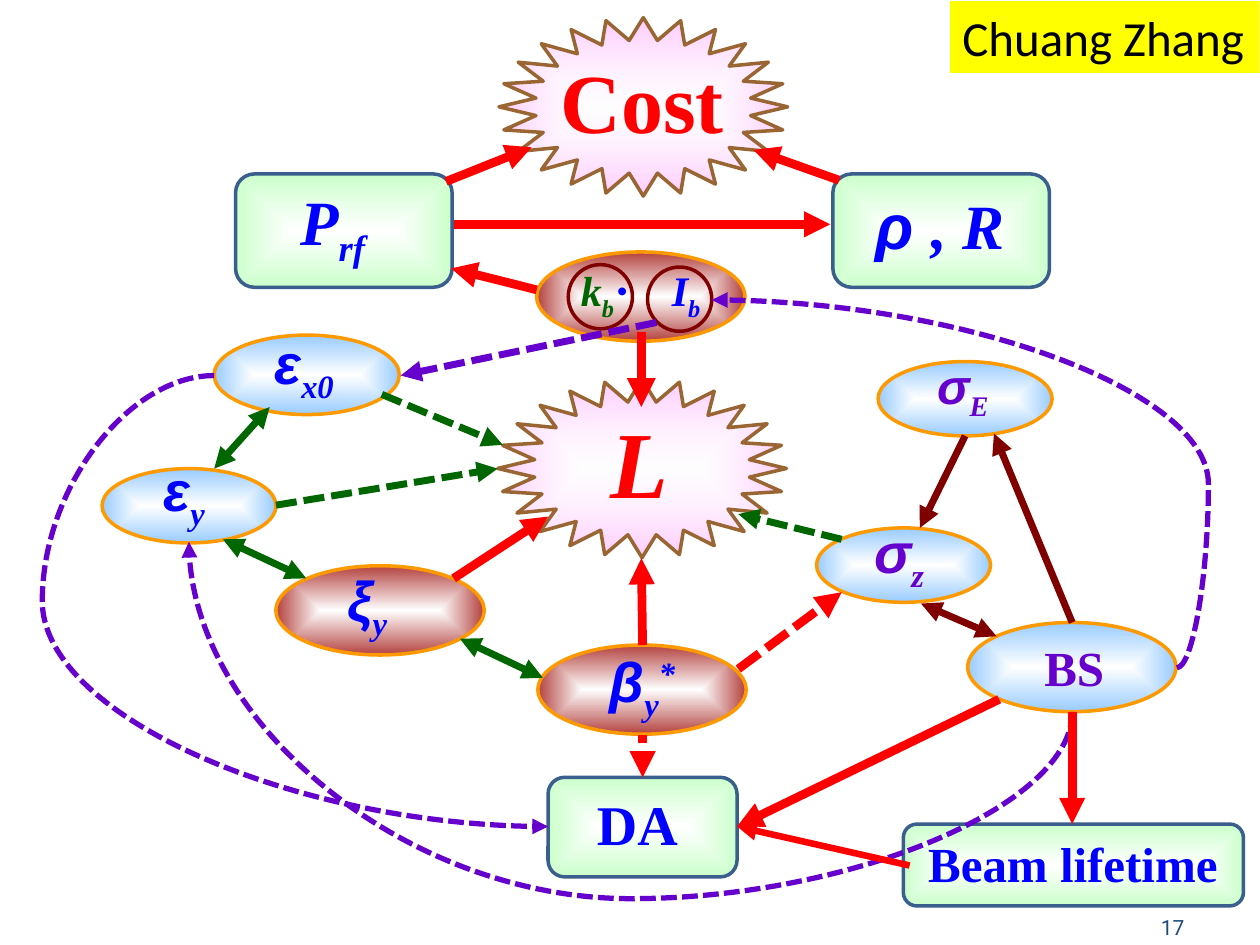
from typing import NamedTuple, Optional

from lxml.etree import SubElement
from pptx import Presentation
from pptx.dml.color import RGBColor
from pptx.enum.dml import MSO_LINE
from pptx.enum.shapes import MSO_CONNECTOR, MSO_SHAPE
from pptx.enum.text import MSO_ANCHOR, MSO_AUTO_SIZE, PP_ALIGN
from pptx.oxml.ns import qn
from pptx.util import Pt

WHITE = RGBColor(0xFF, 0xFF, 0xFF)
BLACK = RGBColor(0x00, 0x00, 0x00)
YELLOW = RGBColor(0xFF, 0xFF, 0x00)
RED = RGBColor(0xFF, 0x00, 0x00)
BLUE = RGBColor(0x00, 0x00, 0xFF)
PURPLE = RGBColor(0x66, 0x00, 0xCC)
GREEN = RGBColor(0x00, 0x66, 0x00)
MAROON = RGBColor(0x80, 0x00, 0x00)
ORANGE = RGBColor(0xFF, 0x99, 0x00)
BROWN = RGBColor(0x99, 0x66, 0x33)
STEEL = RGBColor(0x3A, 0x5F, 0x8C)
NAVY = RGBColor(0x1F, 0x49, 0x7D)
BRICK = RGBColor(0xB3, 0x42, 0x3F)
SKY = RGBColor(0x99, 0xCC, 0xFF)
PINK = RGBColor(0xFF, 0xCC, 0xFF)
MINT = RGBColor(0xCC, 0xFF, 0xCC)

SERIF, SANS = "Times New Roman", "Arial"
BIG, SMALL = (119, 51), (99.4, 42.5)
BOX, STAR = (123.8, 64.8), (165, 102)
CIRCLE = (36.7, 36.7)
DASH, DOT = MSO_LINE.SQUARE_DOT, MSO_LINE.ROUND_DOT


class Run(NamedTuple):
    text: str
    baseline: int = 0
    face: Optional[str] = None
    color: Optional[RGBColor] = None


class Diagram:
    def __init__(self, slide):
        self.shapes = slide.shapes

    def node(self, kind, at, size, edge, tint=None, clear_center=False):
        shape = self.shapes.add_shape(kind, *map(Pt, at + size))
        shape.shadow.inherit = False
        shape.line.color.rgb = edge
        shape.line.width = Pt(2)
        if tint is None:
            shape.fill.background()
            return
        shape.fill.gradient()
        center, rim = shape.fill.gradient_stops
        center.color.rgb, center.position = WHITE, 0
        rim.color.rgb, rim.position = tint, 1
        gradient = shape._element.spPr.find(qn("a:gradFill"))
        gradient.remove(gradient.find(qn("a:lin")))
        focus = SubElement(gradient, qn("a:path"), path="shape")
        SubElement(focus, qn("a:fillToRect"), l="50000", t="50000", r="50000", b="50000")
        if clear_center:
            SubElement(next(gradient.iter(qn("a:srgbClr"))), qn("a:alpha"), val="50000")

    def oval(self, at, size, tint):
        self.node(MSO_SHAPE.OVAL, at, size, ORANGE, tint)

    def ring(self, at):
        self.node(MSO_SHAPE.OVAL, at, CIRCLE, MAROON)

    def box(self, at, size=BOX):
        self.node(MSO_SHAPE.ROUNDED_RECTANGLE, at, size, STEEL, MINT)

    def star(self, at):
        self.node(MSO_SHAPE.STAR_24_POINT, at, STAR, BROWN, PINK, True)

    def label(self, runs, at, size, points, color, bold=True, italic=False,
              face=SERIF, align=PP_ALIGN.LEFT):
        box = self.shapes.add_textbox(*map(Pt, at + size))
        frame = box.text_frame
        frame.word_wrap = True
        frame.auto_size = MSO_AUTO_SIZE.SHAPE_TO_FIT_TEXT
        paragraph = frame.paragraphs[0]
        paragraph.alignment = align
        font = paragraph.font
        font.name, font.size, font.bold, font.italic = face, Pt(points), bold, italic
        font.color.rgb = color
        for part in runs:
            run = paragraph.add_run()
            run.text = part.text
            if part.face:
                run.font.name = part.face
            if part.color:
                run.font.color.rgb = part.color
            if part.baseline:
                run._r.get_or_add_rPr().set("baseline", str(part.baseline * 1000))
        return box

    def symbol(self, greek, subscript, at, size, color=BLUE, points=32, superscript=""):
        runs = [Run(greek, face=SANS), Run(subscript, -25)]
        if superscript:
            runs.append(Run(superscript, 30))
        self.label(runs, at, size, points, color, italic=True)

    def arrow(self, start, end, color, width=5, dash=None, both=False,
              kind=MSO_CONNECTOR.STRAIGHT):
        link = self.shapes.add_connector(kind, *map(Pt, start + end))
        link.line.color.rgb = color
        link.line.width = Pt(width)
        if dash:
            link.line.dash_style = dash
        outline = link.line._get_or_add_ln()
        if both:
            SubElement(outline, qn("a:headEnd"), type="triangle")
        SubElement(outline, qn("a:tailEnd"), type="triangle")
        SubElement(link._element.spPr, qn("a:effectLst"))
        return link

    def curve(self, start, end, bend, rotation=0):
        link = self.arrow(start, end, PURPLE, 3, DASH, kind=MSO_CONNECTOR.CURVE)
        properties = link._element.spPr
        geometry = properties.find(qn("a:prstGeom"))
        adjustments = geometry.find(qn("a:avLst"))
        if adjustments is None:
            adjustments = SubElement(geometry, qn("a:avLst"))
        SubElement(adjustments, qn("a:gd"), name="adj1", fmla=f"val {round(bend * 100000)}")
        if rotation:
            properties.find(qn("a:xfrm")).set("rot", str(rotation * 60000))


def main():
    deck = Presentation()
    deck.slide_width, deck.slide_height = Pt(720), Pt(540)
    diagram = Diagram(deck.slides.add_slide(deck.slide_layouts[6]))
    oval, label, symbol, arrow = diagram.oval, diagram.label, diagram.symbol, diagram.arrow

    number = label([Run("17")], (516, 511), (168, 37.5), 12, NAVY, bold=False,
                   face="Roboto", align=PP_ALIGN.RIGHT)
    number.text_frame.auto_size = MSO_AUTO_SIZE.NONE
    number.text_frame.vertical_anchor = MSO_ANCHOR.MIDDLE

    oval((306.7, 144), BIG, BRICK)
    diagram.star((284.4, 216.7))
    current = label([Run("k"), Run("b", -25), Run("⋅\tI", color=BLUE), Run("b", -25, color=BLUE)],
                    (306.7, 147.6), (119, 36.7), 24, GREEN, italic=True)
    current.text_frame.margin_left = Pt(25.2)
    tabs = SubElement(current.text_frame.paragraphs[0]._p.get_or_add_pPr(), qn("a:tabLst"))
    SubElement(tabs, qn("a:tab"), pos=str(Pt(52)), algn="l")
    tabs.getparent().insert(0, tabs)
    label([Run("L")], (331.2, 227.5), (68.4, 72.7), 54, RED, italic=True, align=PP_ALIGN.CENTER)

    oval((466.6, 301.7), SMALL, SKY)
    symbol("σ", "z", (492.5, 292.3), (57, 46), PURPLE)
    oval((157.7, 323.3), BIG, BRICK)
    symbol("ξ", "y", (191.5, 319.7), (49, 46))
    oval((307.4, 368.6), BIG, BRICK)
    symbol("β", "y", (341.3, 365.8), (70, 46), superscript="*")
    oval((553, 355.7), BIG, SKY)
    label([Run("BS")], (589.7, 360.7), (50.4, 41), 28, PURPLE)
    diagram.box((475.9, 99.4))
    label([Run("ρ ", face=SANS), Run(", R")], (493.2, 103), (95, 51), 36, BLUE, italic=True)
    diagram.star((285.1, 10.1))
    label([Run("Cost")], (308.2, 24.5), (117.4, 65.5), 48, RED, align=PP_ALIGN.CENTER)
    oval((122.4, 191.5), (105.8, 45.4), SKY)
    symbol("ε", "x0", (149.8, 184.3), (52.6, 46))
    diagram.box((313.2, 444.2), (108, 56.9))
    label([Run("DA")], (334, 447.8), (64.8, 46), 32, BLUE)
    diagram.ring((324.7, 151.2))
    diagram.ring((370, 152.6))
    oval((58.3, 267.8), SMALL, SKY)
    symbol("ε", "y", (86.4, 257), (46.8, 46))
    oval((501.8, 206.6), SMALL, SKY)
    symbol("σ", "E", (528.5, 199.4), (50.4, 41), PURPLE, 28)
    diagram.box((134.6, 99.4))
    label([Run("P"), Run("rf", -25)], (157.7, 100.8), (64.8, 51), 36, BLUE,
          italic=True, align=PP_ALIGN.CENTER)

    arrow((367.2, 368.6), (366.5, 319), RED)
    arrow((259.2, 330.5), (313.2, 295.2), RED)
    arrow((366.5, 190), (366.5, 232.6), RED, 5.5)
    arrow((306.7, 165.6), (257.8, 153.4), RED)
    arrow((254.9, 103.7), (303.8, 84.2), RED)
    arrow((479.5, 103), (430.6, 85.7), RED)
    arrow((421.9, 382.3), (481, 338.4), RED, dash=DASH)
    arrow((526.3, 344.9), (569.5, 363.6), MAROON, 4, both=True)
    arrow((612.7, 355.7), (568, 247.7), MAROON, 4)
    arrow((551.5, 249.1), (525.6, 301.7), MAROON, 4)
    arrow((571, 399.6), (421.2, 472.3), RED)
    arrow((367.2, 419.8), (367.2, 444.2), RED, dash=DOT)
    arrow((218.2, 225.4), (287.3, 254.2), GREEN, 4, DASH)
    arrow((157.7, 288.7), (284.4, 267.8), GREEN, 4, DASH)
    arrow((481, 308.2), (421.9, 293.8), GREEN, 4, DASH)
    diagram.curve((122.4, 214.6), (313.2, 472.3), -0.515)
    arrow((375.1, 184.3), (229, 214.6), PURPLE, 4, DASH)
    diagram.curve((672.5, 381.6), (406.8, 171.4), -0.068)
    diagram.box((516.2, 470.9), (194.4, 46.8))
    label([Run("Beam lifetime")], (517.7, 473), (190.8, 41), 28, BLUE, align=PP_ALIGN.CENTER)
    diagram.curve((409, 105.8), (311.8, 610.6), -1.098, rotation=90)
    arrow((612.7, 406.8), (612.7, 470.9), RED)
    arrow((519.8, 494.6), (421.2, 472.3), RED, 3.75)
    arrow((259.2, 128.2), (474.5, 128.2), RED)
    arrow((154.1, 232.6), (122.4, 267.8), GREEN, 4, both=True)
    arrow((175, 330.5), (127.4, 308.2), GREEN, 4, both=True)
    arrow((310.3, 387.4), (262.8, 365), GREEN, 4, both=True)

    author = label([Run("Chuang Zhang")], (542.9, 0.7), (177, 41), 28, BLACK,
                   bold=False, face="Calibri")
    author.text_frame.word_wrap = False
    author.fill.solid()
    author.fill.fore_color.rgb = YELLOW

    deck.save("out.pptx")


if __name__ == "__main__":
    main()
